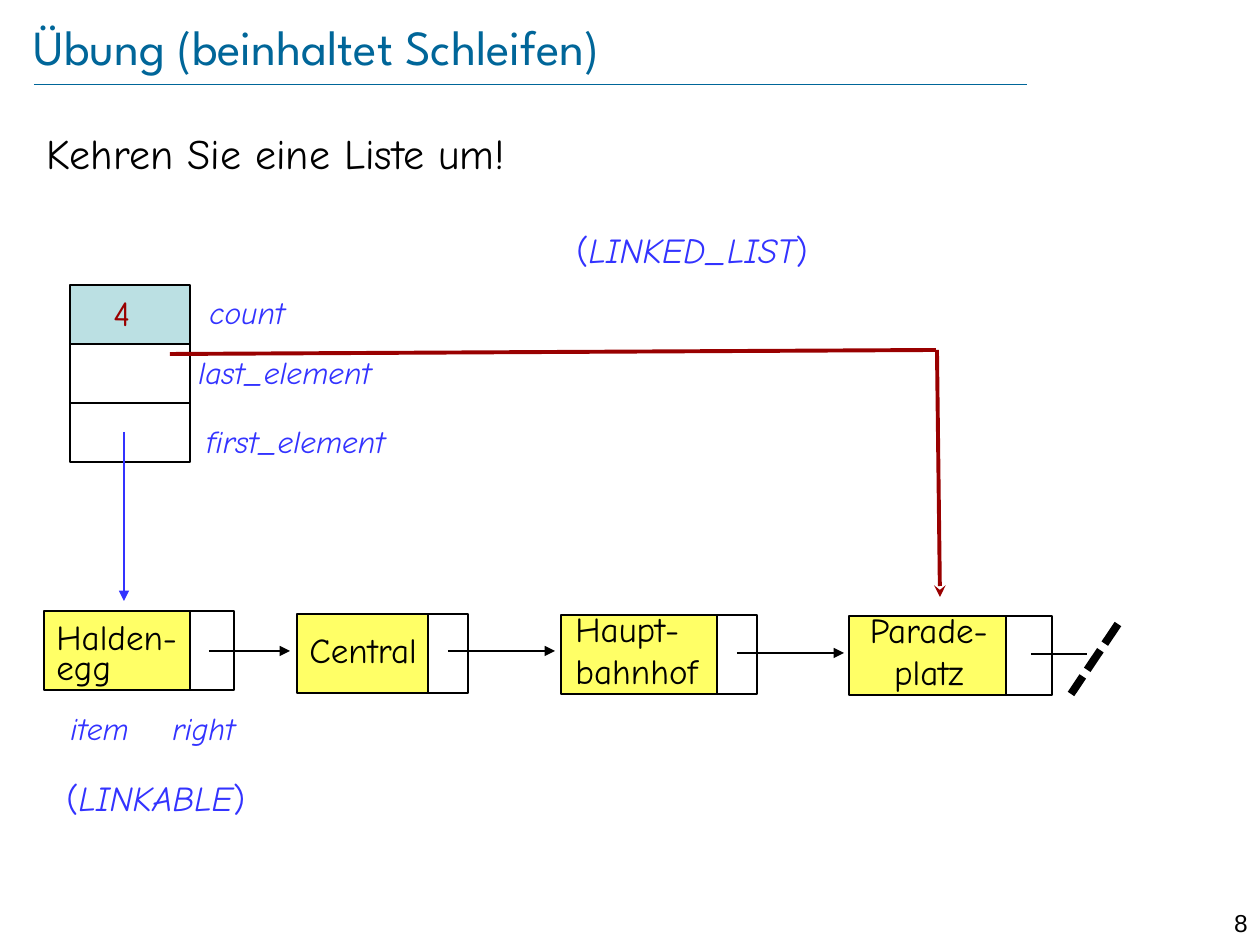
from dataclasses import dataclass
from typing import Optional

from lxml import etree
from pptx import Presentation
from pptx.dml.color import RGBColor
from pptx.enum.dml import MSO_LINE
from pptx.enum.shapes import MSO_CONNECTOR, MSO_SHAPE
from pptx.enum.text import MSO_ANCHOR, PP_ALIGN
from pptx.oxml.ns import qn
from pptx.util import Emu, Pt

STRAIGHT = MSO_CONNECTOR.STRAIGHT
RECTANGLE = MSO_SHAPE.RECTANGLE
LEFT, CENTER, RIGHT = PP_ALIGN.LEFT, PP_ALIGN.CENTER, PP_ALIGN.RIGHT
TOP, MIDDLE = MSO_ANCHOR.TOP, MSO_ANCHOR.MIDDLE
SQUARE_DOT = MSO_LINE.SQUARE_DOT

BLACK = RGBColor(0x00, 0x00, 0x00)
PETROL = RGBColor(0x00, 0x66, 0x99)
BLUE = RGBColor(0x33, 0x33, 0xFF)
RED = RGBColor(0x99, 0x00, 0x00)
YELLOW = RGBColor(0xFF, 0xFF, 0x66)
AQUA = RGBColor(0xBB, 0xE0, 0xE3)

BODY_FONT = "Comic Neue"
TITLE_FONT = "League Spartan"
NUMBER_FONT = "Arial"
PX_PER_INCH = 126
NODE_HEIGHT = 79
FIELD_LEFT, FIELD_TOP, FIELD_WIDTH, FIELD_HEIGHT = 70, 285, 120, 59


@dataclass
class Label:
    text: str
    left: int
    top: int
    width: int
    height: int
    size: int = 20
    color: RGBColor = BLACK
    italic: bool = False
    font: str = BODY_FONT
    align: PP_ALIGN = LEFT
    anchor: MSO_ANCHOR = TOP
    line_spacing: Optional[float] = None
    inset: bool = True


@dataclass
class Node:
    left: int
    top: int
    item_width: int
    link_width: int
    label: Label


@dataclass
class Line:
    start_x: int
    start_y: int
    end_x: int
    end_y: int
    color: RGBColor = BLACK
    width: float = 0.75
    arrowhead: Optional[str] = None
    dash: Optional[MSO_LINE] = None


NODES = [
    Node(44, 611, 146, 44, Label("Halden-egg", 44, 621, 155, 72, line_spacing=0.7)),
    Node(297, 614, 131, 40, Label("Central", 297, 622, 149, 54)),
    Node(561, 615, 156, 40, Label("Haupt-\nbahnhof", 563, 601, 168, 97)),
    Node(849, 616, 157, 46, Label("Parade-\nplatz", 852, 602, 154, 97, align=CENTER)),
]

FIELD_FILLS = [AQUA, None, None]

LABELS = [
    Label("Übung (beinhaltet Schleifen)", 34, 16, 1095, 60, 28, PETROL,
          font=TITLE_FONT, anchor=MIDDLE, inset=False),
    Label("Kehren Sie eine Liste um!", 34, 121, 1184, 777, 24),
    Label("4", 101, 285, 129, 54, color=RED),
    Label("count", 197, 287, 129, 50, 18, BLUE, True),
    Label("last_element", 186, 347, 348, 50, 18, BLUE, True),
    Label("first_element", 194, 416, 348, 50, 18, BLUE, True),
    Label("item", 58, 703, 100, 50, 18, BLUE, True),
    Label("right", 160, 703, 100, 50, 18, BLUE, True),
    Label("8", 1191, 902, 69, 30, 14, font=NUMBER_FONT, align=RIGHT),
]

CLASS_LABELS = [
    Label("LINKABLE", 54, 770, 260, 54, color=BLUE),
    Label("LINKED_LIST", 564, 222, 354, 54, color=BLUE),
]

LINES = [
    Line(34, 84, 1027, 84, PETROL, 0.25),
    Line(209, 651, 290, 651, arrowhead="triangle"),
    Line(448, 651, 555, 651, arrowhead="triangle"),
    Line(737, 653, 844, 653, arrowhead="triangle"),
    Line(1031, 654, 1087, 654, width=1.5),
    Line(1118, 624, 1071, 694, width=4.5, dash=SQUARE_DOT),
    Line(124, 432, 124, 601, BLUE, arrowhead="triangle"),
    Line(170, 354, 936, 350, RED, 2.25),
    Line(937, 350, 940, 597, RED, 2.25, "stealth"),
]


def px(value: int) -> Emu:
    return Emu(round(value * 914400 / PX_PER_INCH))


def draw_box(slide, left: int, top: int, width: int, height: int,
             fill: Optional[RGBColor] = None) -> None:
    shape = slide.shapes.add_shape(RECTANGLE, px(left), px(top), px(width), px(height))
    shape.shadow.inherit = False
    if fill is None:
        shape.fill.background()
    else:
        shape.fill.solid()
        shape.fill.fore_color.rgb = fill
    shape.line.color.rgb = BLACK
    shape.line.width = Pt(0.75)


def add_run(paragraph, text: str, label: Label, italic: bool) -> None:
    run = paragraph.add_run()
    run.text = text
    run.font.name = label.font
    run.font.size = Pt(label.size)
    run.font.italic = italic
    run.font.color.rgb = label.color


def add_label_paragraph(slide, label: Label):
    text_box = slide.shapes.add_textbox(
        px(label.left), px(label.top), px(label.width), px(label.height))
    frame = text_box.text_frame
    frame.word_wrap = True
    frame.vertical_anchor = label.anchor
    if not label.inset:
        frame.margin_left = frame.margin_right = 0
        frame.margin_top = frame.margin_bottom = 0
    paragraph = frame.paragraphs[0]
    paragraph.alignment = label.align
    if label.line_spacing is not None:
        paragraph.line_spacing = label.line_spacing
    return paragraph


def draw_label(slide, label: Label) -> None:
    paragraph = add_label_paragraph(slide, label)
    for index, text in enumerate(label.text.split("\n")):
        if index:
            paragraph.add_line_break()
        add_run(paragraph, text, label, label.italic)


def draw_class_label(slide, label: Label) -> None:
    paragraph = add_label_paragraph(slide, label)
    for text, italic in (("(", False), (label.text, True), (")", False)):
        add_run(paragraph, text, label, italic)


def draw_node(slide, node: Node) -> None:
    draw_box(slide, node.left, node.top, node.item_width, NODE_HEIGHT, YELLOW)
    draw_box(slide, node.left + node.item_width, node.top, node.link_width, NODE_HEIGHT)
    draw_label(slide, node.label)


def draw_line(slide, line: Line) -> None:
    connector = slide.shapes.add_connector(
        STRAIGHT, px(line.start_x), px(line.start_y), px(line.end_x), px(line.end_y))
    connector.line.color.rgb = line.color
    connector.line.width = Pt(line.width)
    if line.dash is not None:
        connector.line.dash_style = line.dash
    properties = connector._element.spPr
    if line.arrowhead:
        outline = properties.find(qn("a:ln"))
        etree.SubElement(outline, qn("a:tailEnd"), type=line.arrowhead)
    etree.SubElement(properties, qn("a:effectLst"))


def main() -> None:
    presentation = Presentation()
    presentation.slide_width, presentation.slide_height = px(1260), px(945)
    slide = presentation.slides.add_slide(presentation.slide_layouts[6])
    for row, fill in enumerate(FIELD_FILLS):
        draw_box(slide, FIELD_LEFT, FIELD_TOP + row * FIELD_HEIGHT,
                 FIELD_WIDTH, FIELD_HEIGHT, fill)
    for node in NODES:
        draw_node(slide, node)
    for label in LABELS:
        draw_label(slide, label)
    for label in CLASS_LABELS:
        draw_class_label(slide, label)
    for line in LINES:
        draw_line(slide, line)
    presentation.save("out.pptx")


if __name__ == "__main__":
    main()
